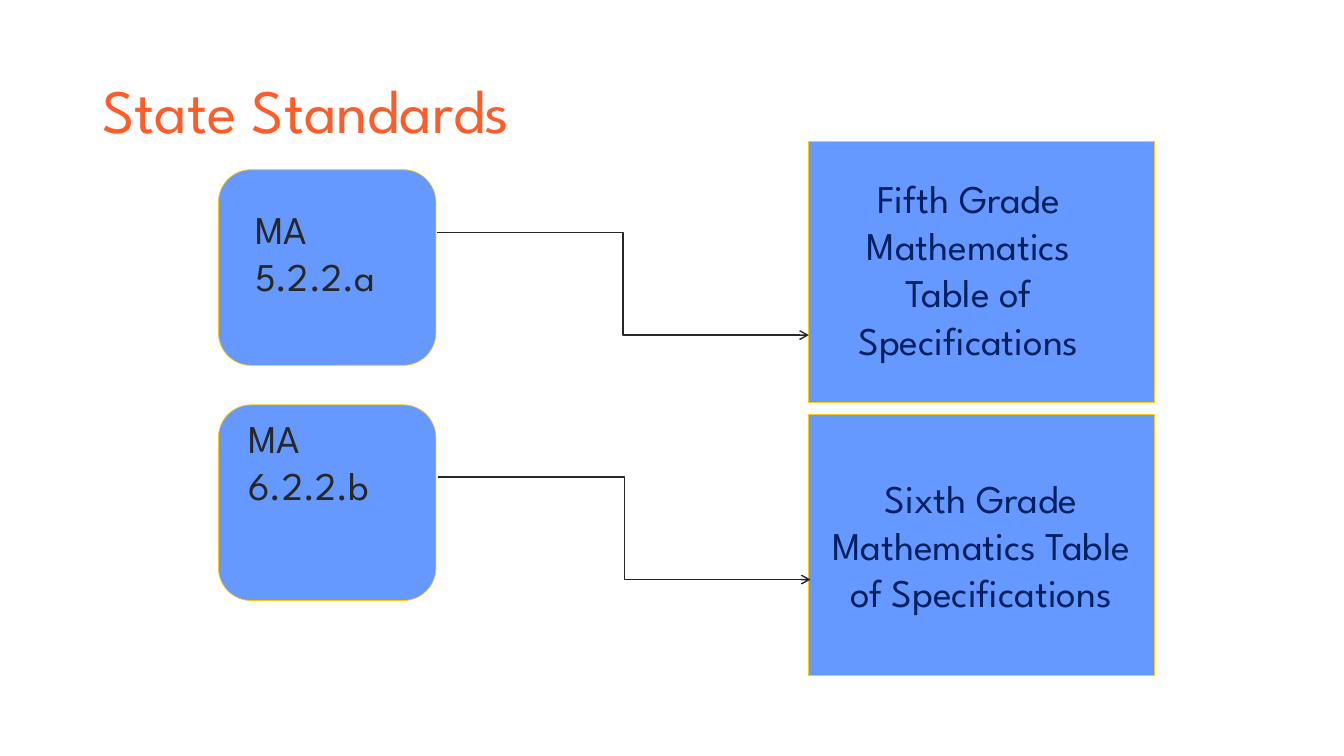
from dataclasses import dataclass

from lxml.etree import SubElement
from pptx import Presentation
from pptx.dml.color import RGBColor as Rgb
from pptx.enum.shapes import MSO_CONNECTOR as Link, MSO_SHAPE as Shape
from pptx.enum.text import MSO_ANCHOR as Anchor, PP_ALIGN as Align
from pptx.oxml.ns import qn
from pptx.util import Inches, Pt

COLS, ROWS = 160, 90
WIDE, HIGH = Inches(13.33), Inches(7.5)


@dataclass(frozen=True)
class Theme:
    font: str = "League Spartan"
    head: Rgb = Rgb(0xFF, 0x5C, 0x29)
    box: Rgb = Rgb(0x66, 0x99, 0xFF)
    edge: Rgb = Rgb(0xFF, 0xCA, 0x08)
    ink: Rgb = Rgb(0x27, 0x27, 0x27)
    navy: Rgb = Rgb(0x00, 0x20, 0x60)
    title: Pt = Pt(44)
    body: Pt = Pt(28)
    thin: Pt = Pt(0.5)
    rule: Pt = Pt(1)


THEME = Theme()
TITLE = {"size": THEME.title, "color": THEME.head, "anchor": Anchor.MIDDLE,
         "para": {"line_spacing": 0.9}}
CODE = {"size": THEME.body, "color": THEME.ink, "anchor": Anchor.TOP, "para": {"alignment": Align.LEFT}}
SPECS = {"size": THEME.body, "color": THEME.navy, "anchor": Anchor.MIDDLE,
         "para": {"alignment": Align.CENTER}}
NOTE = {**SPECS, "anchor": Anchor.TOP}


def grid(x, y, *size):
    """Turn columns and rows into slide lengths."""
    cells = (x, y, *size)
    return [round(n * (HIGH / ROWS if i % 2 else WIDE / COLS)) for i, n in enumerate(cells)]


def assign(item, values):
    for name, value in values.items():
        setattr(item, name, value)


def write(shape, text, form):
    frame = shape.text_frame
    assign(frame, {"word_wrap": True, "vertical_anchor": form["anchor"]})
    para = frame.paragraphs[0]
    assign(para, form["para"])
    run = para.add_run()
    run.text = text
    assign(run.font, {"name": THEME.font, "size": form["size"]})
    run.font.color.rgb = form["color"]


def label(shapes, area, text, form):
    write(shapes.add_textbox(*grid(*area)), text, form)


def block(shapes, kind, area, edged=True):
    shape = shapes.add_shape(kind, *grid(*area))
    shape.shadow.inherit = False
    shape.fill.solid()
    shape.fill.fore_color.rgb = THEME.box
    if edged:
        shape.line.color.rgb = THEME.edge
        shape.line.width = THEME.thin
    else:
        shape.line.fill.background()
    return shape


def badge(shapes, area, inner, text):
    """Group a rounded block with its inset code."""
    group = shapes.add_group_shape().shapes
    block(group, Shape.ROUNDED_RECTANGLE, area)
    write(block(group, Shape.RECTANGLE, inner, edged=False), text, CODE)


def arrow(shapes, start, end):
    link = shapes.add_connector(Link.ELBOW, *grid(*start), *grid(*end))
    link.line.color.rgb = THEME.ink
    link.line.width = THEME.rule
    SubElement(link.line._get_or_add_ln(), qn("a:tailEnd"), type="arrow")
    SubElement(link._element.spPr, qn("a:effectLst"))


def main():
    deck = Presentation()
    assign(deck, {"slide_width": WIDE, "slide_height": HIGH})
    shapes = deck.slides.add_slide(deck.slide_layouts[6]).shapes

    label(shapes, (11, 4.8, 138, 17.4), "State Standards", TITLE)
    for top, inset, text in ((20.2, (29.2, 23.8), "MA 5.2.2.a"),
                             (48.2, (28.4, 48.7), "MA 6.2.2.b")):
        badge(shapes, (26, top, 25.9, 23.3), (*inset, 20.3, 16.2), text)

    fifth, sixth = [block(shapes, Shape.RECTANGLE, (96.2, top, 41.2, 31.1))
                    for top in (16.8, 49.3)]
    write(sixth, "Sixth Grade Mathematics Table of Specifications", SPECS)
    for x, y in ((52, 27.7), (52.2, 56.8)):
        arrow(shapes, (x, y), (x + 44.3, y + 12.2))
    label(shapes, (96.5, 20.2, 37.6, 23.9),
          "Fifth Grade Mathematics Table of Specifications", NOTE)

    deck.save("out.pptx")


if __name__ == "__main__":
    main()
